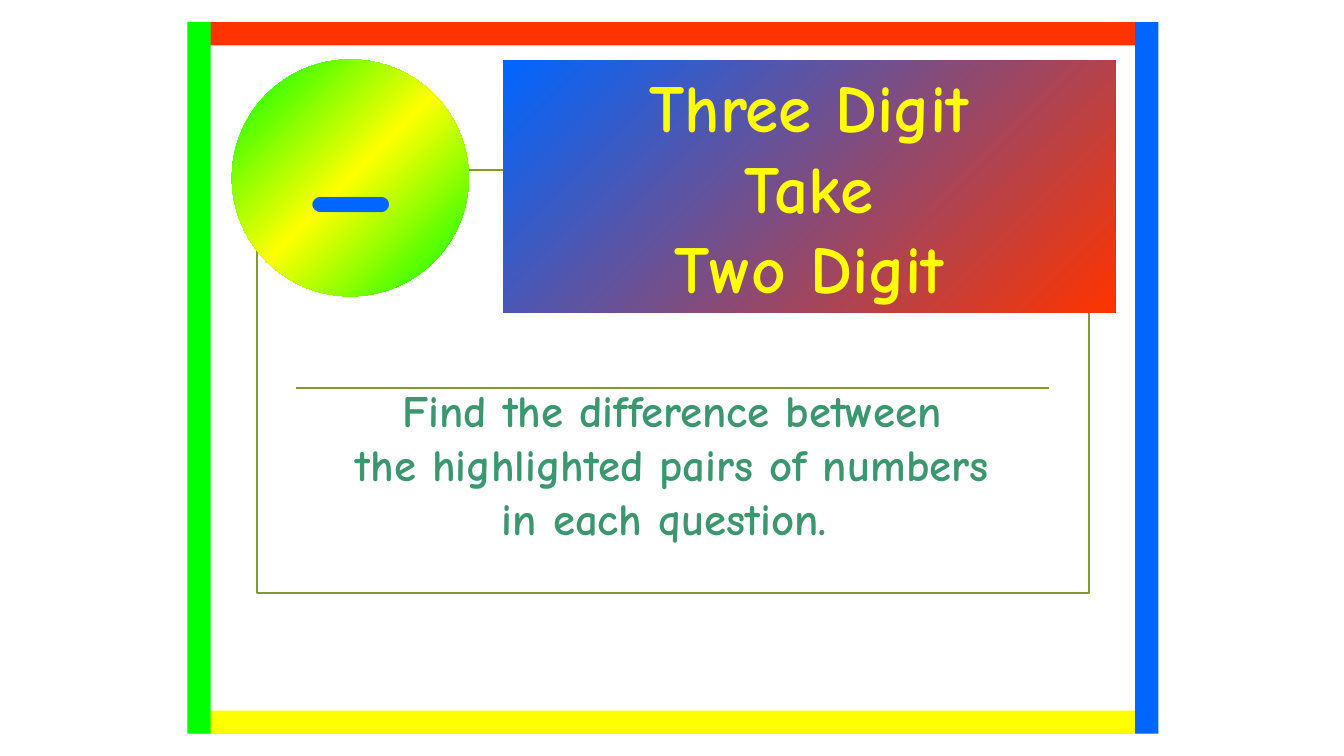
from dataclasses import dataclass

import pptx
import pptx.util
import pptx.dml.color
import pptx.enum.shapes
import pptx.enum.text
import pptx.oxml
import pptx.oxml.ns

SHAPE = pptx.enum.shapes.MSO_SHAPE
ANCHOR = pptx.enum.text.MSO_ANCHOR
WIDTH, HEIGHT = pptx.util.Inches(13.33), pptx.util.Inches(7.5)


@dataclass(frozen=True)
class Theme:
    font: str = "Comic Neue"
    red: str = "FF3300"
    yellow: str = "FFFF00"
    green: str = "00FF00"
    blue: str = "0066FF"
    olive: str = "83992A"
    teal: str = "3C9770"
    title_size: int = 48
    prompt_size: int = 32
    sign_size: int = 180
    line_width: float = 1.25


THEME = Theme()


def rgb(color):
    return pptx.dml.color.RGBColor.from_string(color)


def across(share):
    """Percentage of the slide width."""
    return round(WIDTH * share / 100)


def down(share):
    """Percentage of the slide height."""
    return round(HEIGHT * share / 100)


def box(x, y, w, h):
    return across(x), down(y), across(w), down(h)


def style_line(line):
    line.color.rgb = rgb(THEME.olive)
    line.width = pptx.util.Pt(THEME.line_width)


def set_gradient(s, colors):
    """Evenly spaced colours running from top left to bottom right."""
    s.fill.gradient()
    s.fill.gradient_angle = 315
    stops = s._element.spPr.find(".//" + pptx.oxml.ns.qn("a:gsLst"))
    for stop in list(stops):
        stops.remove(stop)
    for i, color in enumerate(colors):
        pos = 100000 * i // (len(colors) - 1)
        stops.append(pptx.oxml.parse_xml(
            f'<a:gs {pptx.oxml.ns.nsdecls("a")} pos="{pos}">'
            f'<a:srgbClr val="{color}"/></a:gs>'))


def add_block(slide, kind, place, color=None):
    s = slide.shapes.add_shape(kind, *place)
    s.shadow.inherit = False
    s.line.fill.background()
    if color:
        s.fill.solid()
        s.fill.fore_color.rgb = rgb(color)
    else:
        s.fill.background()
    return s


def add_rule(slide, x1, x2, y):
    s = slide.shapes.add_connector(pptx.enum.shapes.MSO_CONNECTOR.STRAIGHT,
                                   across(x1), down(y), across(x2), down(y))
    style_line(s.line)
    s._element.spPr.append(pptx.oxml.parse_xml(
        f'<a:effectLst {pptx.oxml.ns.nsdecls("a")}/>'))


def write(tf, lines, size, color, bold=True, anchor=ANCHOR.TOP):
    tf.word_wrap = True
    tf.auto_size = pptx.enum.text.MSO_AUTO_SIZE.NONE
    tf.vertical_anchor = anchor
    for i, line in enumerate(lines):
        p = tf.add_paragraph() if i else tf.paragraphs[0]
        p.text = line
        p.alignment = pptx.enum.text.PP_ALIGN.CENTER
        p.font.name = THEME.font
        p.font.size = pptx.util.Pt(size)
        p.font.bold = bold
        p.font.color.rgb = rgb(color)


def add_text(slide, place, lines, size, color, bold=True):
    write(slide.shapes.add_textbox(*place).text_frame, lines, size, color, bold)


def place_title(slide, place, lines):
    s = slide.shapes.title
    s.left, s.top, s.width, s.height = place
    set_gradient(s, [THEME.blue, THEME.red])
    write(s.text_frame, lines, THEME.title_size, THEME.yellow,
          anchor=ANCHOR.MIDDLE)
    # Bring the title in front of the thin frame
    slide.shapes._spTree.append(s._element)


def main():
    prs = pptx.Presentation()
    prs.slide_width, prs.slide_height = WIDTH, HEIGHT
    slide = prs.slides.add_slide(prs.slide_layouts[5])

    # Thin frame and rule
    frame = add_block(slide, SHAPE.RECTANGLE, box(19.13, 22.53, 61.89, 55.87))
    style_line(frame.line)
    add_rule(slide, 22.06, 78.02, 51.33)

    # Title and instruction
    place_title(slide, box(37.43, 8, 45.54, 33.33),
                ["Three Digit", "Take", "Two Digit"])
    add_text(slide, box(17.03, 50, 66.02, 22.93),
             ["Find the difference between",
              "the highlighted pairs of numbers",
              "in each question. "], THEME.prompt_size, THEME.teal)

    # Coloured border: top and bottom, then left and right
    for y, color in ((2.93, THEME.red), (94, THEME.yellow)):
        add_block(slide, SHAPE.RECTANGLE, box(14.4, y, 71.27, 3.07), color)
    for x, color in ((13.95, THEME.green), (84.47, THEME.blue)):
        add_block(slide, SHAPE.RECTANGLE, box(x, 2.93, 1.73, 94.13), color)

    # Minus sign badge
    badge = add_block(slide, SHAPE.OVAL, box(17.25, 7.87, 17.63, 31.33))
    set_gradient(badge, [THEME.green, THEME.yellow, THEME.green])
    add_text(slide, box(17.1, 1.2, 18, 41.33), ["-"],
             THEME.sign_size, THEME.blue, bold=False)

    prs.save("out.pptx")


if __name__ == "__main__":
    main()
